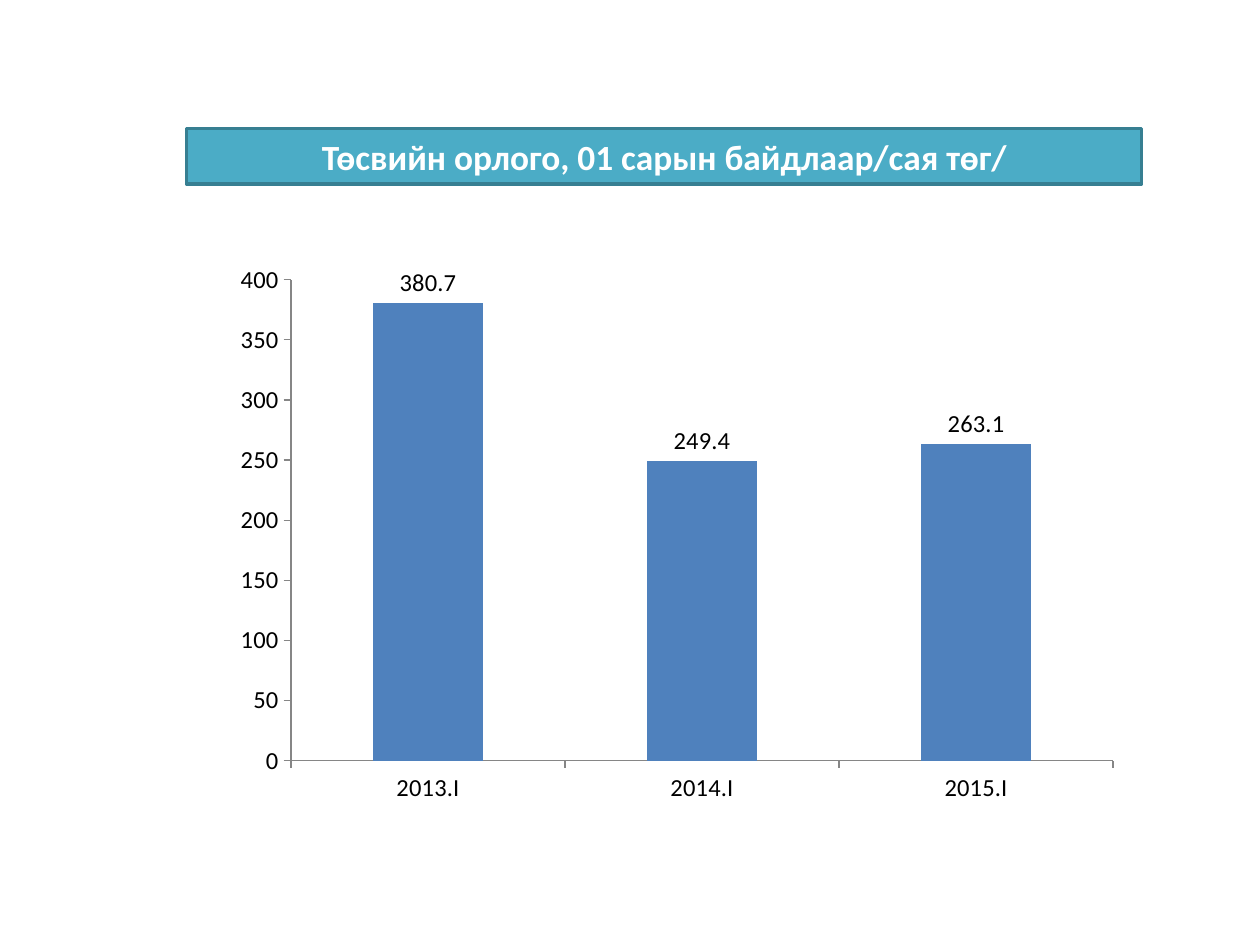
import pptx
import pptx.chart.data
import pptx.dml.color
import pptx.enum.chart
import pptx.enum.shapes
import pptx.enum.text
import pptx.oxml
import pptx.oxml.ns
import pptx.util
from pptx.util import Inches

FONT = "Calibri"
WHITE = pptx.dml.color.RGBColor(0xFF, 0xFF, 0xFF)
BLACK = pptx.dml.color.RGBColor(0x00, 0x00, 0x00)
TEAL = pptx.dml.color.RGBColor(0x4B, 0xAC, 0xC6)
DARK_TEAL = pptx.dml.color.RGBColor(0x37, 0x7F, 0x92)
BLUE = pptx.dml.color.RGBColor(0x4F, 0x81, 0xBD)
GREY = pptx.dml.color.RGBColor(0x86, 0x86, 0x86)

REVENUE = {"2013.I": 380.7, "2014.I": 249.4, "2015.I": 263.1}


def set_font(font, size, color, bold=False):
    """Apply the slide's typeface with a size, colour and weight."""
    font.name = FONT
    font.size = pptx.util.Pt(size)
    font.color.rgb = color
    font.bold = bold


def write_text(frame, text, *, size, color, bold=False):
    """Write one centred line of text into a text frame."""
    frame.word_wrap = True
    frame.vertical_anchor = pptx.enum.text.MSO_ANCHOR.MIDDLE
    para = frame.paragraphs[0]
    para.alignment = pptx.enum.text.PP_ALIGN.CENTER
    span = para.add_run()
    span.text = text
    set_font(span.font, size, color, bold)


def add_banner(page, text, left, top, width, height):
    """Add the outlined title banner."""
    box = page.shapes.add_shape(
        pptx.enum.shapes.MSO_SHAPE.RECTANGLE,
        Inches(left), Inches(top), Inches(width), Inches(height))
    box.shadow.inherit = False
    box.fill.solid()
    box.fill.fore_color.rgb = TEAL
    box.line.color.rgb = DARK_TEAL
    box.line.width = pptx.util.Pt(2)
    write_text(box.text_frame, text, size=20.2, color=WHITE, bold=True)


def place_plot(chart, **fractions):
    """Fix the inner plot area as fractions of the chart."""
    plot_area = chart._chartSpace.chart.plotArea
    for old in plot_area.findall(pptx.oxml.ns.qn("c:layout")):
        plot_area.remove(old)
    modes = '<c:layoutTarget val="inner"/><c:xMode val="edge"/><c:yMode val="edge"/>'
    sizes = "".join(f'<c:{key} val="{value}"/>' for key, value in fractions.items())
    plot_area.insert(0, pptx.oxml.parse_xml(
        f'<c:layout {pptx.oxml.ns.nsdecls("c")}>'
        f"<c:manualLayout>{modes}{sizes}</c:manualLayout></c:layout>"))


def style_axis(axis):
    """Give an axis a grey line and outer ticks without gridlines."""
    axis.has_major_gridlines = False
    axis.major_tick_mark = pptx.enum.chart.XL_TICK_MARK.OUTSIDE
    axis.minor_tick_mark = pptx.enum.chart.XL_TICK_MARK.NONE
    axis.format.line.color.rgb = GREY
    axis.format.line.width = pptx.util.Pt(0.75)
    set_font(axis.tick_labels.font, 14, BLACK)


def add_column_chart(page, values, left, top, width, height):
    """Add the column chart with a value above each column."""
    data = pptx.chart.data.CategoryChartData()
    data.categories = list(values)
    data.add_series("Series 1", list(values.values()))
    chart = page.shapes.add_chart(
        pptx.enum.chart.XL_CHART_TYPE.COLUMN_CLUSTERED,
        Inches(left), Inches(top), Inches(width), Inches(height), data).chart
    chart.has_title = False
    chart.has_legend = False
    set_font(chart.font, 14, BLACK)
    place_plot(chart, x=0.1, y=0.04, w=0.87, h=0.8)

    plot = chart.plots[0]
    plot.vary_by_categories = False
    plot.gap_width = 150
    fill = plot.series[0].format.fill
    fill.solid()
    fill.fore_color.rgb = BLUE
    labels = plot.series[0].data_labels
    labels.show_value = True
    labels.position = pptx.enum.chart.XL_LABEL_POSITION.OUTSIDE_END
    set_font(labels.font, 14, BLACK)

    for axis in (chart.category_axis, chart.value_axis):
        style_axis(axis)
    chart.value_axis.minimum_scale = 0
    chart.value_axis.maximum_scale = 400
    chart.value_axis.major_unit = 50


def main():
    """Build and save the budget revenue slide."""
    deck = pptx.Presentation()
    deck.slide_width, deck.slide_height = Inches(10), Inches(7.5)
    page = deck.slides.add_slide(deck.slide_layouts[6])
    add_banner(page, "Төсвийн орлого, 01 сарын байдлаар/сая төг/",
               1.48, 1.02, 7.58, 0.44)
    add_column_chart(page, REVENUE, 1.56, 2.03, 7.5, 4.77)
    deck.save("out.pptx")


if __name__ == "__main__":
    main()
